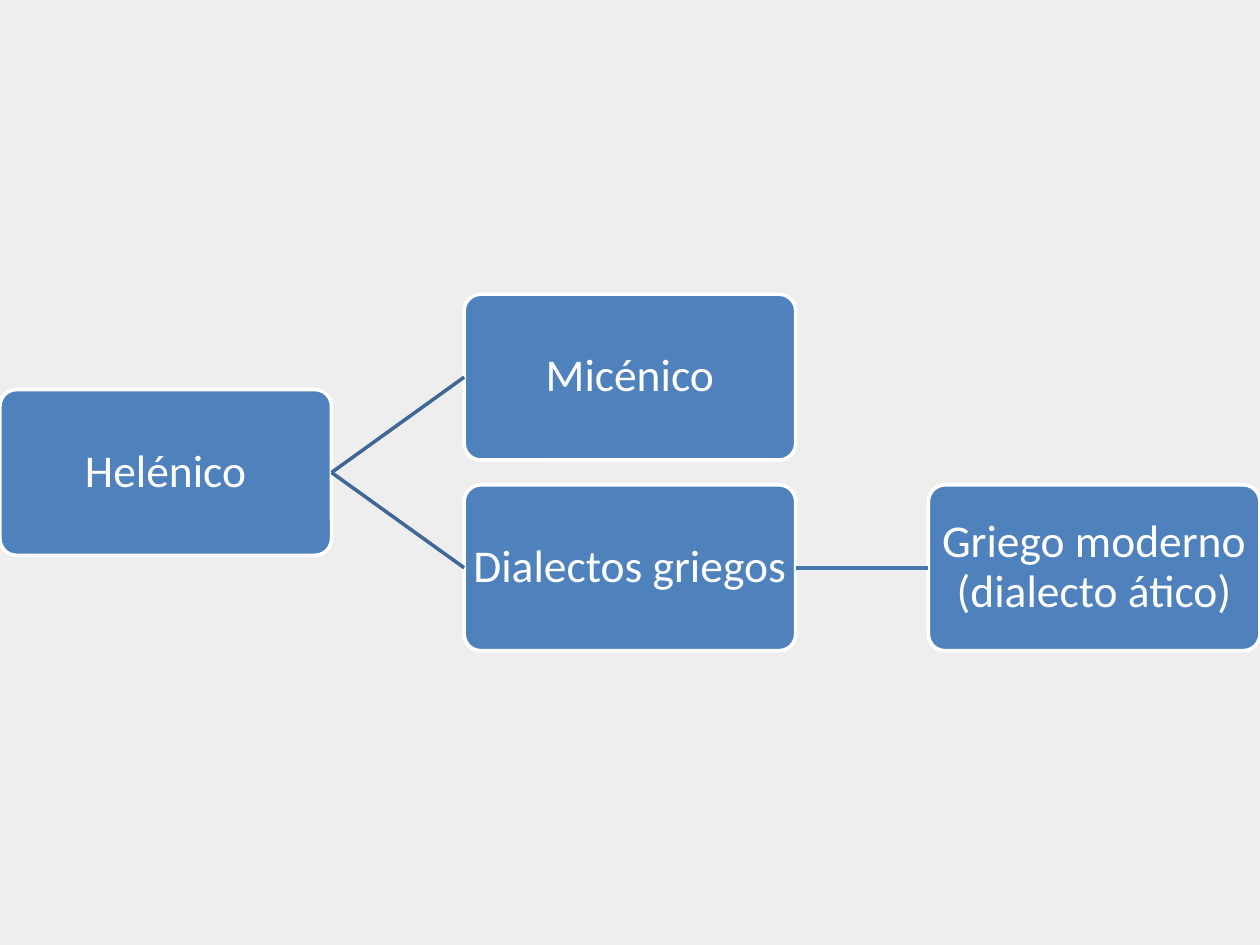
from pptx import Presentation, util as u
from pptx.dml.color import RGBColor
from pptx.enum import shapes, text
from pptx.oxml.ns import qn
from lxml import etree

PALE = RGBColor(0xEE, 0xEE, 0xEE)
BLUE = RGBColor(0x4F, 0x81, 0xBD)
DARK = RGBColor(0x3F, 0x67, 0x97)
MID = RGBColor(0x48, 0x75, 0xAC)
WHITE = RGBColor(0xFF, 0xFF, 0xFF)


def write(frame, words, size=26, font="Calibri", color=WHITE, pad=0.02):
    frame.word_wrap = True
    frame.vertical_anchor = text.MSO_ANCHOR.MIDDLE
    frame.margin_left = frame.margin_right = u.Inches(pad)
    frame.margin_top = frame.margin_bottom = u.Inches(pad)
    para = frame.paragraphs[0]
    para.text = words
    para.alignment = text.PP_ALIGN.CENTER
    para.line_spacing = 0.9
    para.font.size = u.Pt(size)
    para.font.name = font
    para.font.color.rgb = color


class Tree:
    def __init__(self, deck):
        self.slide = deck.slides.add_slide(deck.slide_layouts[6])
        back = self.slide.background.fill
        back.solid()
        back.fore_color.rgb = PALE
        self.wide = deck.slide_width / 3.8
        self.high = self.wide / 2
        self.mid = deck.slide_height / 2

    def node(self, words, col, row):
        left = col * 1.4 * self.wide
        top = self.mid + (row * 1.15 - 0.5) * self.high
        box = self.slide.shapes.add_shape(
            shapes.MSO_SHAPE.ROUNDED_RECTANGLE,
            *map(round, (left, top, self.wide, self.high)))
        box.adjustments[0] = 0.1
        box.shadow.inherit = False
        box.fill.solid()
        box.fill.fore_color.rgb = BLUE
        box.line.color.rgb = WHITE
        box.line.width = u.Pt(2)
        write(box.text_frame, words)
        return box

    def link(self, start, end, color):
        line = self.slide.shapes.add_connector(
            shapes.MSO_CONNECTOR.STRAIGHT, 0, 0, 0, 0)
        line.begin_connect(start, 3)
        line.end_connect(end, 1)
        line.line.color.rgb = color
        line.line.width = u.Pt(2)
        etree.SubElement(line._element.spPr, qn("a:effectLst"))


def main():
    deck = Presentation()
    deck.slide_width = u.Inches(10)
    deck.slide_height = u.Inches(7.5)
    tree = Tree(deck)
    root = tree.node("Helénico", 0, 0)
    old = tree.node("Micénico", 1, -0.5)
    greek = tree.node("Dialectos griegos", 1, 0.5)
    new = tree.node("Griego moderno (dialecto ático)", 2, 0.5)
    tree.link(root, old, DARK)
    tree.link(root, greek, DARK)
    tree.link(greek, new, MID)
    deck.save("out.pptx")


if __name__ == "__main__":
    main()
